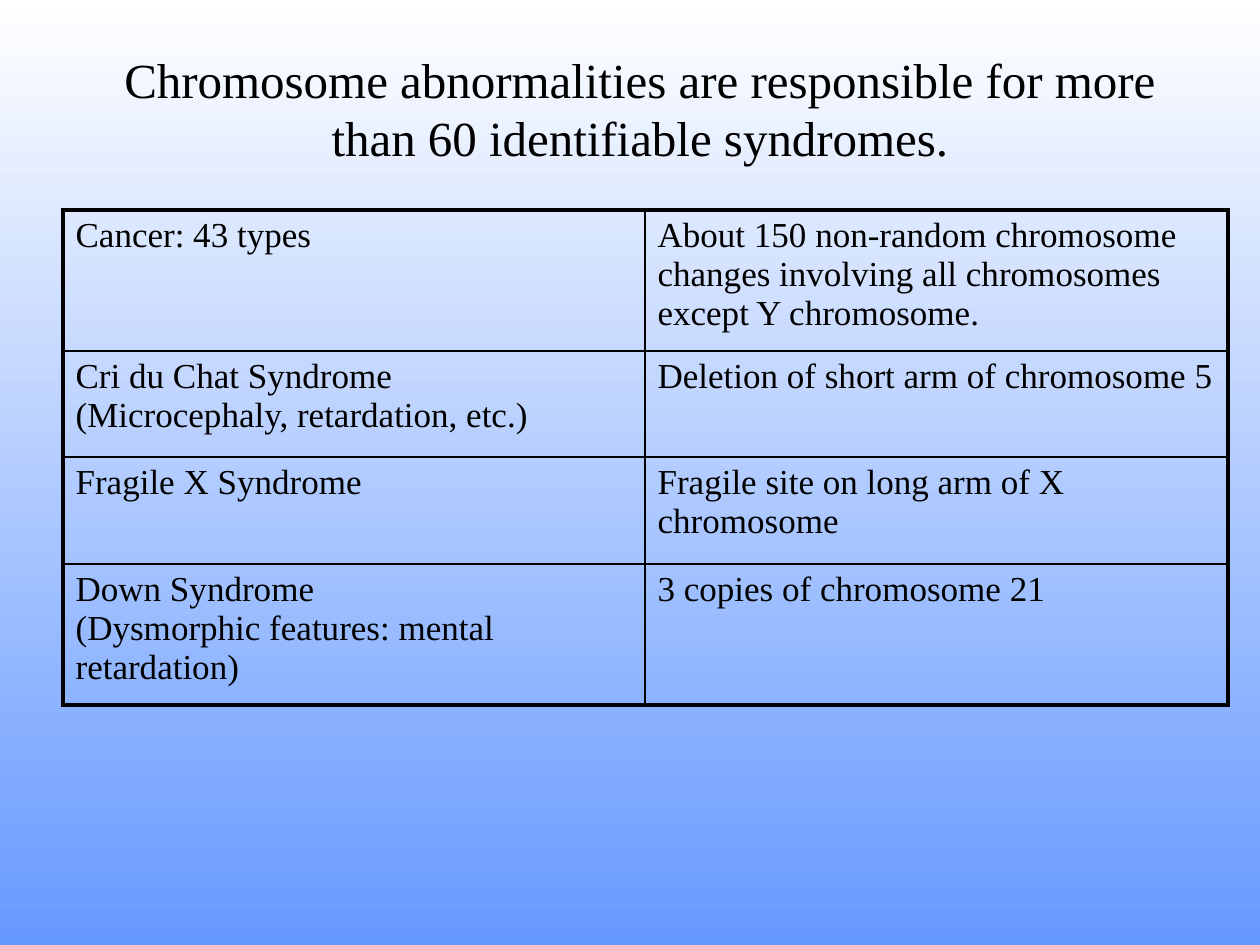
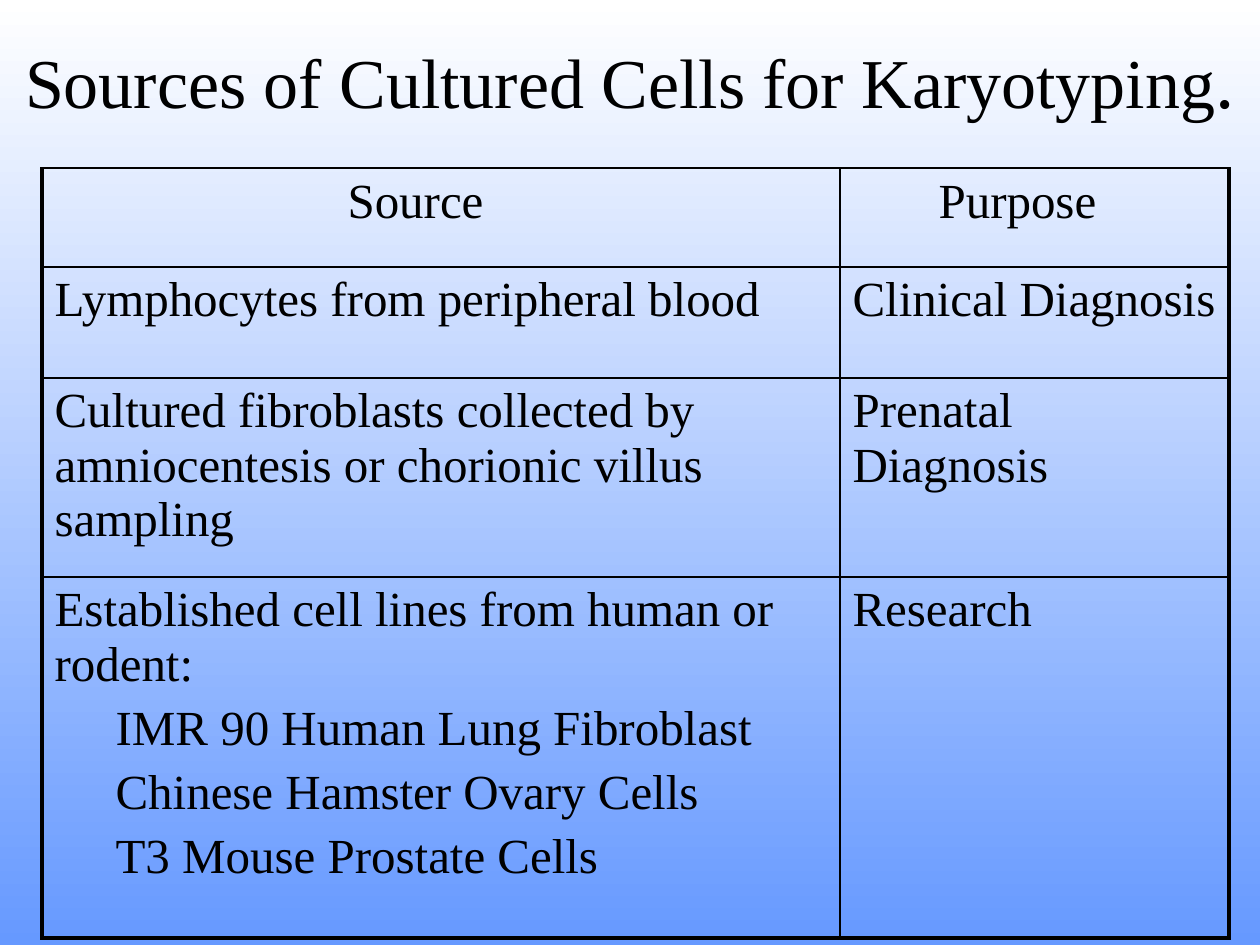
from lxml.etree import SubElement
from pptx import Presentation
from pptx.dml.color import RGBColor
from pptx.enum.text import MSO_ANCHOR, PP_ALIGN
from pptx.oxml.ns import qn
from pptx.util import Pt

PX = 914400 // 126  # EMU in one px
FONT = "Times New Roman"
COLORS = {"ink": "000000", "sky_top": "FFFFFF", "sky_bottom": "6699FF"}
OUTER, INNER = 2.25, 1  # rule widths in points

SYNDROMES = [
    ["Cancer: 43 types",
     "About 150 non-random chromosome changes involving all chromosomes "
     "except Y chromosome."],
    ["Cri du Chat Syndrome\v(Microcephaly, retardation, etc.)",
     "Deletion of short arm of chromosome 5"],
    ["Fragile X Syndrome", "Fragile site on long arm of X chromosome"],
    ["Down Syndrome\v(Dysmorphic features: mental retardation)",
     "3 copies of chromosome 21"],
]
CELL_SOURCES = [
    ["Source", "Purpose"],
    ["Lymphocytes from peripheral blood", "Clinical Diagnosis"],
    ["Cultured fibroblasts collected by amniocentesis or chorionic villus "
     "sampling", "Prenatal Diagnosis"],
    ["Established cell lines from human or rodent:\n"
     "IMR 90 Human Lung Fibroblast\n"
     "Chinese Hamster Ovary Cells\n"
     "T3 Mouse Prostate Cells", "Research"],
]


def px(length):
    return length * PX


def style(run, size):
    run.font.name = FONT
    run.font.size = Pt(size)
    run.font.color.rgb = RGBColor.from_string(COLORS["ink"])


def paint_background(master):
    """White to blue, top to bottom, inherited by every slide."""
    fill = master.background.fill
    fill.gradient()
    fill.gradient_angle = 270
    for stop, name in zip(fill.gradient_stops, ("sky_top", "sky_bottom")):
        stop.color.rgb = RGBColor.from_string(COLORS[name])


def add_title(slide, box, parts, lift, line_spacing=None):
    """Centred title of (text, size) parts, raised by a bottom inset."""
    frame = slide.shapes.add_textbox(*map(px, box)).text_frame
    frame.word_wrap = True
    frame.vertical_anchor = MSO_ANCHOR.MIDDLE
    frame.margin_bottom = px(lift)
    heading = frame.paragraphs[0]
    heading.alignment = PP_ALIGN.CENTER
    if line_spacing:
        heading.line_spacing = Pt(line_spacing)
    for text, size in parts:
        run = heading.add_run()
        run.text = text
        style(run, size)


def rule_cell(cell, widths):
    """Draw the four cell borders; widths maps L, R, T, B to points."""
    properties = cell._tc.get_or_add_tcPr()
    for side, width in widths.items():
        line = SubElement(properties, qn(f"a:ln{side}"), w=str(Pt(width)))
        ink = SubElement(line, qn("a:solidFill"))
        SubElement(ink, qn("a:srgbClr"), val=COLORS["ink"])


def add_grid(slide, corner, columns, rows, content, size, top_rule=OUTER):
    """Unfilled table with a heavy frame and thin inner rules."""
    grid = slide.shapes.add_table(
        len(rows), len(columns), *map(px, (*corner, sum(columns), sum(rows)))
    ).table
    grid.first_row = grid.horz_banding = False
    for column, width in zip(grid.columns, columns):
        column.width = px(width)
    last_row, last_column = len(rows) - 1, len(columns) - 1
    for r, height in enumerate(rows):
        grid.rows[r].height = px(height)
        for c in range(len(columns)):
            cell = grid.cell(r, c)
            cell.text_frame.text = content[r][c]
            for i, paragraph in enumerate(cell.text_frame.paragraphs):
                if i:
                    paragraph.space_before = Pt(size * 0.2)
                for run in paragraph.runs:
                    style(run, size)
            rule_cell(cell, {
                "L": OUTER if c == 0 else INNER,
                "R": OUTER if c == last_column else INNER,
                "T": top_rule if r == 0 else INNER,
                "B": OUTER if r == last_row else INNER,
            })
            cell.fill.background()
    return grid


def indent(paragraph, length):
    paragraph._p.get_or_add_pPr().set("marL", str(px(length)))


def build_syndromes(slide):
    add_title(slide, (94, 84, 1092, 105),
              [("Chromosome abnormalities are responsible for more than 60 "
                "identifiable syndromes.", 28)], lift=63, line_spacing=33.5)
    add_grid(slide, (63, 210), (582, 583), (141, 106, 107, 141),
             SYNDROMES, size=20)


def build_cell_sources(slide):
    add_title(slide, (0, 42, 1260, 157),
              [("Sources of Cultured Cells for Karyotyping", 40), (".", 44)],
              lift=91)
    grid = add_grid(slide, (42, 168), (798, 389), (99, 111, 199, 361),
                    CELL_SOURCES, size=28, top_rule=INNER)
    # Column headings and the list of cell lines are indented
    for c, length in enumerate((293, 86)):
        indent(grid.cell(0, c).text_frame.paragraphs[0], length)
    for cell_line in grid.cell(3, 0).text_frame.paragraphs[1:]:
        indent(cell_line, 61)


def main():
    deck = Presentation()
    deck.slide_width, deck.slide_height = px(1260), px(945)
    paint_background(deck.slide_master)
    blank = deck.slide_layouts[6]
    for build in (build_syndromes, build_cell_sources):
        build(deck.slides.add_slide(blank))
    deck.save("out.pptx")


if __name__ == "__main__":
    main()
